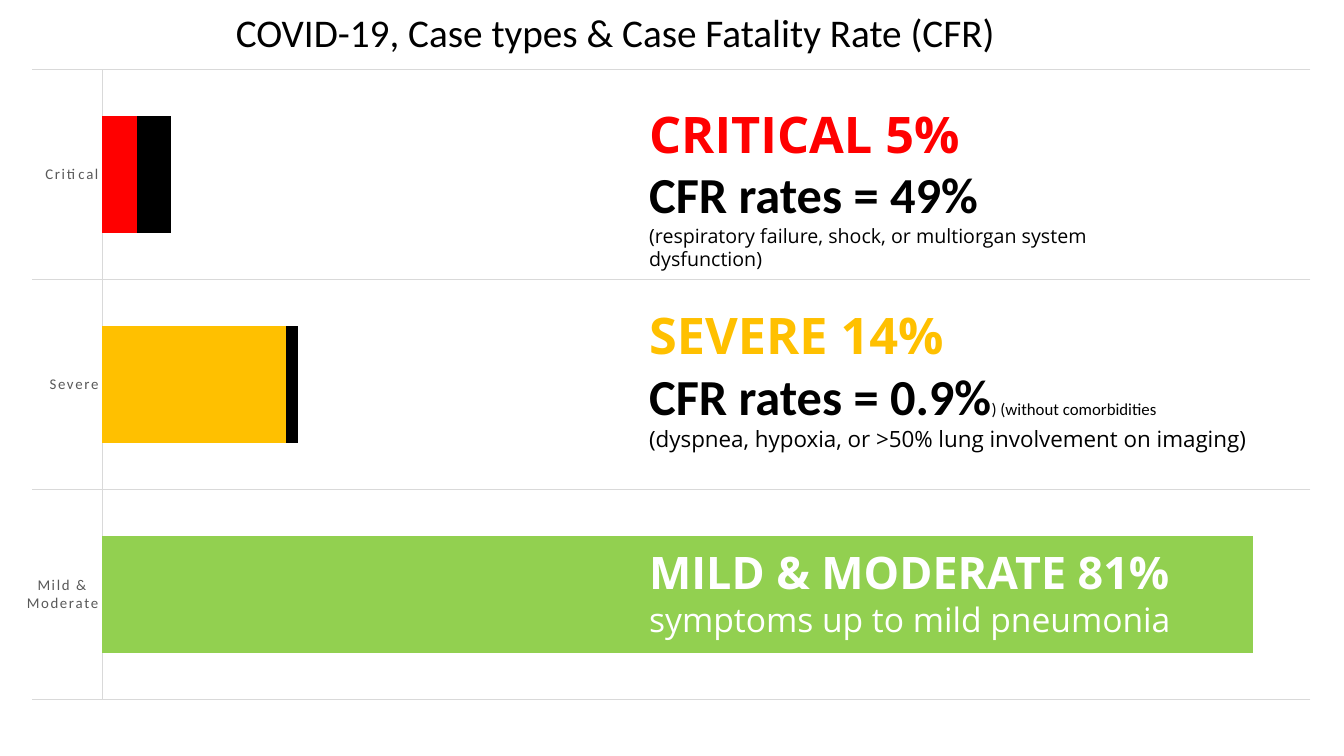
from dataclasses import dataclass

from pptx import Presentation
from pptx import util as u
from pptx.chart import data as chart_data
from pptx.dml.color import RGBColor
from pptx.enum import chart as chart_enum
from pptx.enum import text


@dataclass(frozen=True)
class Theme:
    body_font: str = "Calibri"
    accent_font: str = "Open Sans"
    black: str = "000000"
    white: str = "FFFFFF"
    label: str = "595959"
    grid: str = "D9D9D9"
    mild: str = "92D050"
    severe: str = "FFC000"
    critical: str = "FF0000"
    title_size: float = 28
    heading_size: float = 36
    mild_heading_size: float = 32
    mild_note_size: float = 24
    severe_note_size: float = 16
    critical_note_size: float = 14
    remark_size: float = 12
    axis_size: float = 10.6
    chart_size: float = 10
    axis_spacing: int = 120


def style_font(font, *, size, name, color, bold=False):
    font.size = u.Pt(size)
    font.name = name
    font.bold = bold
    font.color.rgb = RGBColor.from_string(color)


def add_text(paragraph, content, **style):
    """Append one run in the given format."""
    run = paragraph.add_run()
    run.text = content
    style_font(run.font, **style)


def paint(fill, color):
    fill.solid()
    fill.fore_color.rgb = RGBColor.from_string(color)


class SlideBuilder:
    def __init__(self, slide, theme):
        self.slide = slide
        self.theme = theme

    def text_box(self, left, top, width, height, paragraphs, *,
                 align=text.PP_ALIGN.LEFT, anchor=text.MSO_ANCHOR.TOP,
                 auto_size=text.MSO_AUTO_SIZE.SHAPE_TO_FIT_TEXT, line_spacing=None):
        """Each paragraph is a list of (content, style) runs."""
        box = self.slide.shapes.add_textbox(*map(u.Inches, (left, top, width, height)))
        frame = box.text_frame
        frame.word_wrap = True
        frame.auto_size = auto_size
        frame.vertical_anchor = anchor
        for index, runs in enumerate(paragraphs):
            paragraph = frame.add_paragraph() if index else frame.paragraphs[0]
            paragraph.alignment = align
            paragraph.line_spacing = line_spacing
            for content, style in runs:
                add_text(paragraph, content, **style)

    def stacked_bars(self, left, top, width, height, categories, series, colors,
                     point_colors, *, minimum, maximum, gap, plot):
        theme = self.theme
        data = chart_data.CategoryChartData()
        data.categories = categories
        for name, values in series:
            data.add_series(name, values)
        chart = self.slide.shapes.add_chart(
            chart_enum.XL_CHART_TYPE.BAR_STACKED,
            *map(u.Inches, (left, top, width, height)), data).chart
        chart.has_legend = False
        chart.has_title = False
        style_font(chart.font, size=theme.chart_size, name=theme.body_font,
                   color=theme.black)

        # Bars
        bars = chart.plots[0]
        bars.gap_width = gap
        bars.overlap = 100
        bars.vary_by_categories = False
        for one_series, color in zip(bars.series, colors):
            paint(one_series.format.fill, color)
        for index, color in enumerate(point_colors):
            paint(bars.series[0].points[index].format.fill, color)

        # Axes
        value_axis = chart.value_axis
        value_axis.minimum_scale = minimum
        value_axis.maximum_scale = maximum
        value_axis.has_major_gridlines = False
        value_axis.visible = False
        category_axis = chart.category_axis
        category_axis.major_tick_mark = chart_enum.XL_TICK_MARK.NONE
        category_axis.has_major_gridlines = True
        for line in (category_axis.format.line, category_axis.major_gridlines.format.line):
            line.color.rgb = RGBColor.from_string(theme.grid)
            line.width = u.Pt(0.75)
        style_font(category_axis.tick_labels.font, size=theme.axis_size,
                   name=theme.body_font, color=theme.label)
        for properties in category_axis._element.xpath("c:txPr//a:defRPr"):
            properties.set("spc", str(theme.axis_spacing))

        # Fixed inner plot area
        plot_area = chart._chartSpace.chart.plotArea
        for old_layout in plot_area.xpath("c:layout"):
            plot_area.remove(old_layout)
        layout = plot_area.makeelement(plot_area.tag.replace("plotArea", "layout"), {})
        plot_area.insert(0, layout)

        def add_setting(parent, tag, value=None):
            attributes = {} if value is None else {"val": str(value)}
            child = parent.makeelement(plot_area.tag.replace("plotArea", tag), attributes)
            parent.append(child)
            return child

        manual = add_setting(layout, "manualLayout")
        add_setting(manual, "layoutTarget", "inner")
        add_setting(manual, "xMode", "edge")
        add_setting(manual, "yMode", "edge")
        for tag, value in zip("xywh", plot):
            add_setting(manual, tag, value)


def main():
    presentation = Presentation()
    presentation.slide_width = u.Inches(13.33)
    presentation.slide_height = u.Inches(7.5)
    slide = presentation.slides.add_slide(presentation.slide_layouts[6])
    theme = Theme()
    builder = SlideBuilder(slide, theme)

    def body(size, bold=False):
        return dict(size=size, name=theme.body_font, color=theme.black, bold=bold)

    def accent(size, color=theme.black, bold=False):
        return dict(size=size, name=theme.accent_font, color=color, bold=bold)

    # Title
    builder.text_box(
        0.32, 0.08, 11.56, 0.54,
        [[("COVID-19, Case types & Case Fatality Rate (CFR)", body(theme.title_size))]],
        align=text.PP_ALIGN.CENTER, anchor=text.MSO_ANCHOR.MIDDLE,
        auto_size=text.MSO_AUTO_SIZE.NONE, line_spacing=0.9)

    # Case shares, with the deaths in black
    builder.stacked_bars(
        0, 0.52, 13.33, 6.87,
        ["Mild & Moderate", "Severe", "Critical"],
        [("Series 1", (100, 16, 3)), ("Series 2", (0, 1, 3))],
        [theme.mild, theme.black], [theme.mild, theme.severe, theme.critical],
        minimum=-6.1, maximum=105, gap=79, plot=(0.024, 0.025, 0.951, 0.91))

    # Case descriptions
    rate = body(theme.heading_size, bold=True)
    descriptions = [
        (5.36, 6.1, 1.04, [
            [("MILD & MODERATE 81%", accent(theme.mild_heading_size, theme.white, True))],
            [("symptoms up to mild pneumonia", accent(theme.mild_note_size, theme.white))],
        ]),
        (2.97, 6.27, 1.58, [
            [("SEVERE 14%", accent(theme.heading_size, theme.severe, True))],
            [("CFR rates = 0.9%", rate),
             (") (without comorbidities", body(theme.remark_size))],
            [("(dyspnea, hypoxia, or >50% lung involvement on imaging)",
              accent(theme.severe_note_size))],
        ]),
        (0.97, 5.7, 1.55, [
            [("CRITICAL 5%", accent(theme.heading_size, theme.critical, True))],
            [("CFR rates = 49%", rate)],
            [("(respiratory failure, shock, or multiorgan system dysfunction)",
              accent(theme.critical_note_size))],
        ]),
    ]
    for top, width, height, paragraphs in descriptions:
        builder.text_box(6.34, top, width, height, paragraphs)

    presentation.save("out.pptx")


if __name__ == "__main__":
    main()
